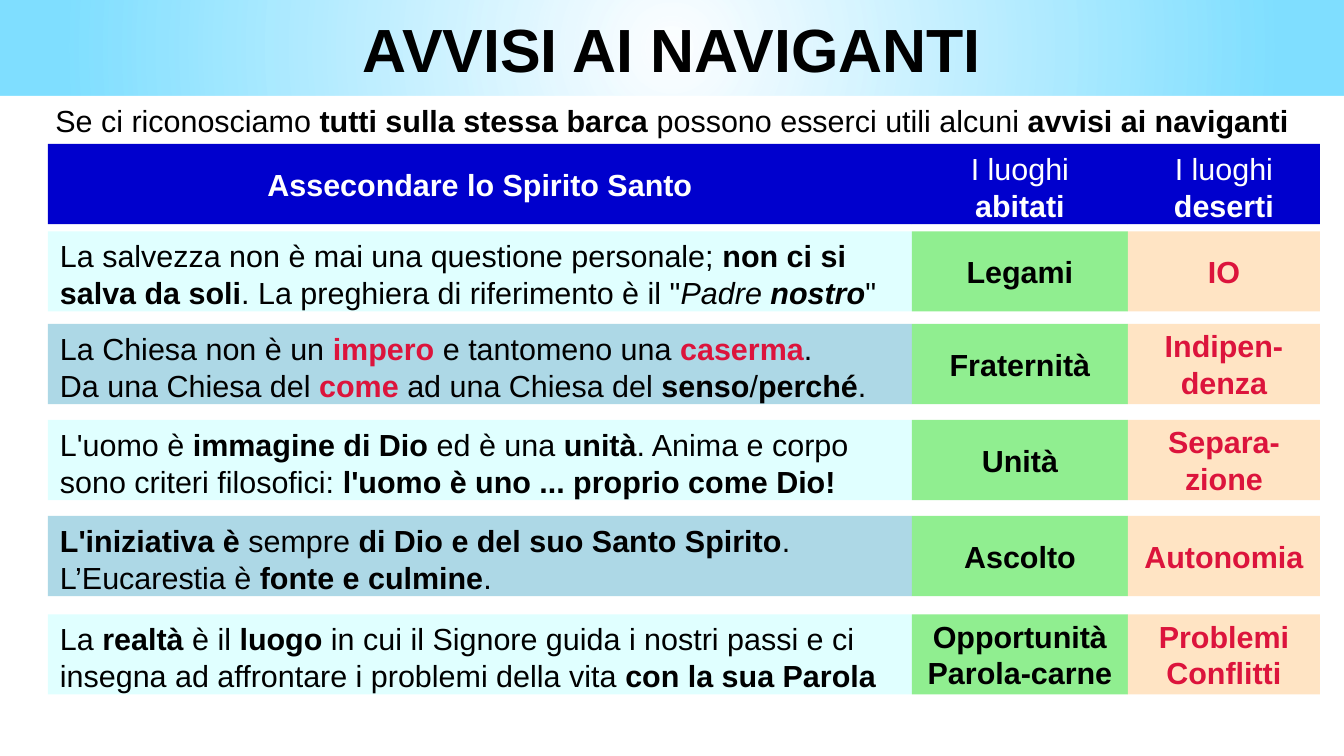
from pptx import Presentation
from pptx.dml.color import RGBColor
from pptx.enum.shapes import MSO_SHAPE as Preset
from pptx.enum.text import MSO_ANCHOR as Anchor, PP_ALIGN as Align
from pptx.oxml import parse_xml
from pptx.oxml.ns import nsdecls
from pptx.util import Cm, Pt

BLACK, WHITE, CRIMSON = "000000", "FFFFFF", "DC143C"
SKY, NAVY, GREEN, BISQUE = "00BFFF", "0000CD", "90EE90", "FFE4C4"
ADVICE_FILLS = ["E0FFFF", "ADD8E6"]

# Font settings of each kind of run
PLAIN = {"bold": False, "italic": False}
BOLD = {"bold": True, "italic": False}
ITALIC = {"bold": False, "italic": True}
BOLD_ITALIC = {"bold": True, "italic": True}

# Columns as (left, width), row tops and height, all in cm
ADVICE, INHABITED, DESERT = (1, 18), (19, 4.5), (23.5, 4)
HEADER_TOP = 3
ROW_TOPS = [4.82, 6.75, 8.75, 10.75, 12.8]
ROW_HEIGHT = 1.67

# Each row: advice runs (text, format, optional colour), inhabited, desert
ROWS = [
    ([("La salvezza non è mai una questione personale; ", PLAIN),
      ("non ci si salva da soli", BOLD),
      (". La preghiera di riferimento è il \"", PLAIN),
      ("Padre ", ITALIC), ("nostro", BOLD_ITALIC), ("\"", PLAIN)],
     "Legami", "IO"),
    ([("La Chiesa non è un ", PLAIN), ("impero", BOLD, CRIMSON),
      (" e tantomeno una ", PLAIN), ("caserma", BOLD, CRIMSON),
      (". \nDa una Chiesa del ", PLAIN), ("come", BOLD, CRIMSON),
      (" ad una Chiesa del ", PLAIN), ("senso", BOLD), ("/", PLAIN),
      ("perché", BOLD), (".", PLAIN)],
     "Fraternità", "Indipen-denza"),
    ([("L'uomo è ", PLAIN), ("immagine di Dio", BOLD),
      (" ed è una ", PLAIN), ("unità", BOLD),
      (". Anima e corpo sono criteri filosofici:", PLAIN),
      (" l'uomo è uno ... proprio come Dio!", BOLD)],
     "Unità", "Separa-zione"),
    ([("L'iniziativa è", BOLD), (" sempre ", PLAIN),
      ("di Dio e del suo Santo Spirito", BOLD),
      (".\nL’Eucarestia è ", PLAIN), ("fonte e culmine", BOLD), (".", PLAIN)],
     "Ascolto", "Autonomia"),
    ([("La ", PLAIN), ("realtà", BOLD), (" è il ", PLAIN), ("luogo", BOLD),
      (" in cui il Signore guida i nostri passi e ci insegna ad affrontare"
       " i problemi della vita ", PLAIN),
      ("con la sua Parola", BOLD)],
     "Opportunità\nParola-carne", "Problemi\nConflitti"),
]


def rgb(value):
    return RGBColor.from_string(value)


def add_run(paragraph, size, base_color, text, settings, color=None):
    for number, line in enumerate(text.split("\n")):
        if number:
            paragraph.add_line_break()
        run = paragraph.add_run()
        run.text = line
        font_format = {"name": "Arial", "size": Pt(size), **settings}
        for attribute, value in font_format.items():
            setattr(run.font, attribute, value)
        run.font.color.rgb = rgb(color or base_color)


def write(holder, paragraphs, color=BLACK, size=18, align=Align.CENTER,
          anchor=Anchor.MIDDLE):
    frame = holder.text_frame
    frame.word_wrap = True
    frame.vertical_anchor = anchor
    for number, runs in enumerate(paragraphs):
        paragraph = frame.add_paragraph() if number else frame.paragraphs[0]
        paragraph.alignment = align
        for run in runs:
            add_run(paragraph, size, color, *run)


def add_block(slide, left, top, width, height):
    block = slide.shapes.add_shape(
        Preset.RECTANGLE, Cm(left), Cm(top), Cm(width), Cm(height))
    block.shadow.inherit = False
    block.line.fill.background()
    return block


def add_cell(slide, column, top, fill, paragraphs, **text_format):
    left, width = column
    cell = add_block(slide, left, top, width, ROW_HEIGHT)
    cell.fill.solid()
    cell.fill.fore_color.rgb = rgb(fill)
    write(cell, paragraphs, **text_format)


def add_title(slide):
    banner = add_block(slide, 0, 0, 28, 2)
    # Radial glow, from clear in the centre to half-strength sky blue
    stops = "".join(
        f'<a:gs pos="{pos}"><a:srgbClr val="{SKY}"><a:alpha val="{alpha}"/>'
        "</a:srgbClr></a:gs>" for pos, alpha in [(0, 0), (90000, 50000)])
    glow = parse_xml(
        f'<a:gradFill {nsdecls("a")} rotWithShape="1"><a:gsLst>{stops}</a:gsLst>'
        '<a:path path="circle"><a:fillToRect l="50000" t="50000" r="50000"'
        ' b="50000"/></a:path></a:gradFill>')
    banner.element.spPr.insert(2, glow)
    write(banner, [[("AVVISI AI NAVIGANTI", BOLD)]], size=36)


def add_intro(slide):
    intro = slide.shapes.add_textbox(Cm(0), Cm(2), Cm(28), Cm(1))
    write(intro, [[("Se ci riconosciamo ", PLAIN),
                   ("tutti sulla stessa barca", BOLD),
                   (" possono esserci utili alcuni ", PLAIN),
                   ("avvisi ai naviganti", BOLD)]], anchor=Anchor.TOP)


def add_header(slide):
    add_cell(slide, ADVICE, HEADER_TOP, NAVY,
             [[("Assecondare lo Spirito Santo", BOLD)]], color=WHITE)
    for column, place in [(INHABITED, "abitati"), (DESERT, "deserti")]:
        add_cell(slide, column, HEADER_TOP, NAVY,
                 [[("I luoghi", PLAIN)], [(place, BOLD)]],
                 color=WHITE, anchor=Anchor.TOP)


def add_row(slide, top, advice_fill, advice, inhabited, desert):
    add_cell(slide, ADVICE, top, advice_fill, [advice],
             align=Align.LEFT, anchor=Anchor.TOP)
    add_cell(slide, INHABITED, top, GREEN, [[(inhabited, BOLD)]])
    add_cell(slide, DESERT, top, BISQUE, [[(desert, BOLD)]], color=CRIMSON)


def main():
    deck = Presentation()
    deck.slide_width, deck.slide_height = Cm(28), Cm(15.75)
    slide = deck.slides.add_slide(deck.slide_layouts[6])

    # Heading
    add_title(slide)
    add_intro(slide)

    # Grid of advice, with alternating fills
    add_header(slide)
    for number, (top, row) in enumerate(zip(ROW_TOPS, ROWS)):
        add_row(slide, top, ADVICE_FILLS[number % 2], *row)

    deck.save("out.pptx")


if __name__ == "__main__":
    main()
